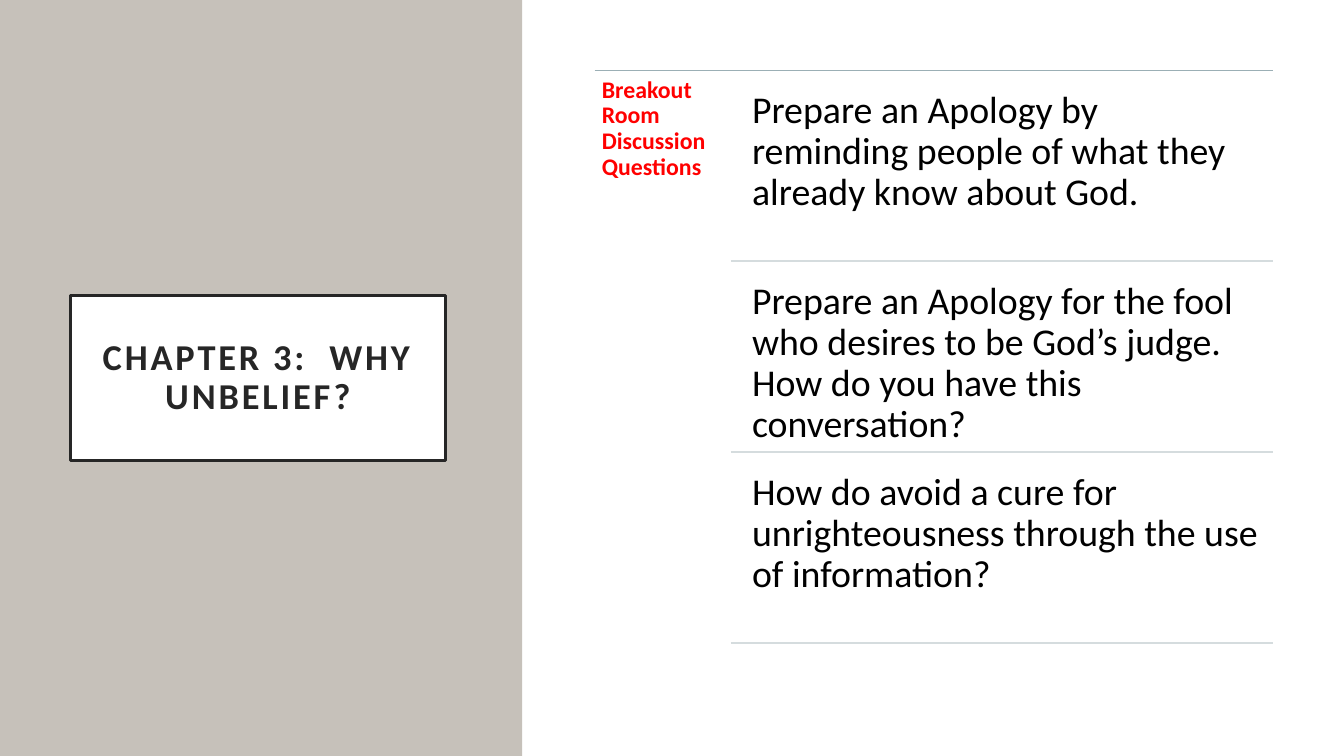
from lxml import etree
from pptx import Presentation
from pptx.dml.color import RGBColor
from pptx.enum.shapes import MSO_CONNECTOR, MSO_SHAPE
from pptx.enum.text import MSO_ANCHOR, MSO_AUTO_SIZE, PP_ALIGN
from pptx.oxml.ns import qn
from pptx.util import Pt

RECT = MSO_SHAPE.RECTANGLE
LINE = MSO_CONNECTOR.STRAIGHT
MIDDLE, TOP = MSO_ANCHOR.MIDDLE, MSO_ANCHOR.TOP
CENTER, LEFT = PP_ALIGN.CENTER, PP_ALIGN.LEFT
FIXED = MSO_AUTO_SIZE.NONE

HEX = {"white": "FFFFFF", "stone": "C6C1BA", "ink": "262626", "black": "000000",
       "red": "FF0000", "slate": "9BAFB5", "mist": "D5DCDE"}
COLOR = {name: RGBColor.from_string(code) for name, code in HEX.items()}

ASKS = [
    "Prepare an Apology by reminding people of what they already know about God.",
    "Prepare an Apology for the fool who desires to be God’s judge. "
    "How do you have this conversation?",
    "How do avoid a cure for unrighteousness through the use of information?",
]


def write(shape, text, size, color, inset, bold=False, align=LEFT, anchor=TOP):
    frame = shape.text_frame
    frame.word_wrap = True
    frame.auto_size = FIXED
    frame.vertical_anchor = anchor
    frame.margin_left = frame.margin_right = Pt(inset)
    frame.margin_top = frame.margin_bottom = Pt(inset)
    para = frame.paragraphs[0]
    para.alignment = align
    para.line_spacing = 0.9
    run = para.add_run()
    run.text = text
    run.font.name = "Calibri"
    run.font.size = Pt(size)
    run.font.bold = bold
    run.font.color.rgb = COLOR[color]
    return run


def rule(left, top, color):
    line = slide.shapes.add_connector(LINE, Pt(left), Pt(top), Pt(RIGHT), Pt(top))
    line.line.color.rgb = COLOR[color]
    line.line.width = Pt(1)
    etree.SubElement(line._element.spPr, qn("a:effectLst"))


deck = Presentation()
deck.slide_width, deck.slide_height = Pt(960), Pt(540)
slide = deck.slides.add_slide(deck.slide_layouts[5])

# Side panel and white page
for left, width, color in [(0, 373, "stone"), (374, 586, "white")]:
    panel = slide.shapes.add_shape(RECT, Pt(left), 0, Pt(width), Pt(540))
    panel.shadow.inherit = False
    panel.fill.solid()
    panel.fill.fore_color.rgb = COLOR[color]
    panel.line.fill.background()

# Boxed title, in front of the panel
title = slide.shapes.title
slide.shapes._spTree.append(title._element)
title.left, title.top = Pt(50.4), Pt(211)
title.width, title.height = Pt(267.8), Pt(118)
title.fill.solid()
title.fill.fore_color.rgb = COLOR["white"]
title.line.color.rgb = COLOR["ink"]
title.line.width = Pt(2.5)
run = write(title, "CHAPTER 3:  WHY UNBELIEF?", 26, "ink", 14.4, True, CENTER, MIDDLE)
run.font._element.set("spc", "200")

# Heading column
RIGHT = 909.4
rule(424.8, 50.4, "slate")
head = slide.shapes.add_textbox(Pt(424.8), Pt(50.4), Pt(97.2), Pt(415.4))
write(head, "Breakout Room Discussion Questions", 17, "red", 5.1, True)

# Questions, each closed by a rule
FIRST, STEP, HIGH = 56.9, 136.4, 129.6
for row, ask in enumerate(ASKS):
    top = FIRST + row * STEP
    box = slide.shapes.add_textbox(Pt(529.2), Pt(top), Pt(380.2), Pt(HIGH))
    write(box, ask, 27, "black", 8)
    rule(522, top + HIGH, "mist")

deck.save("out.pptx")
